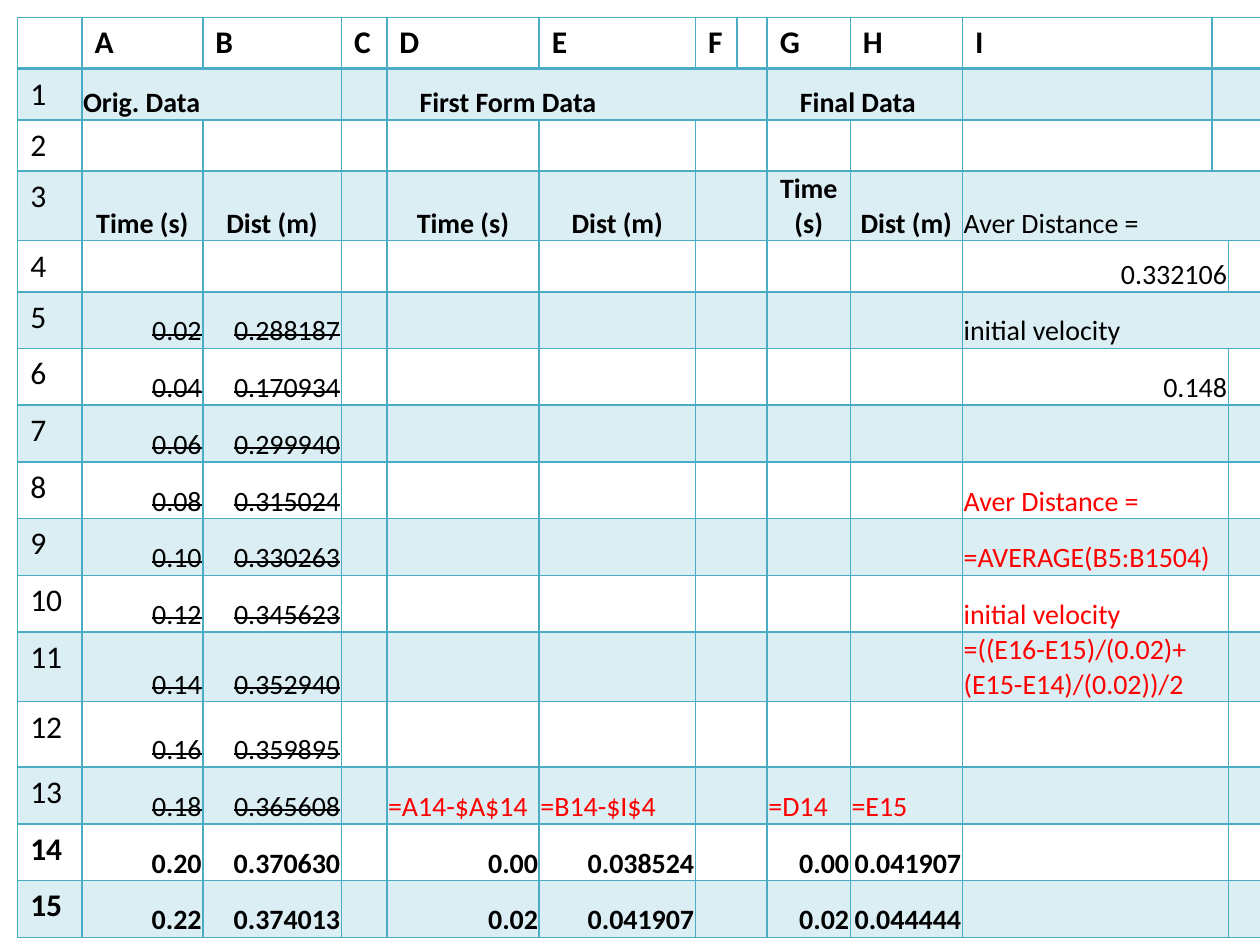
from dataclasses import dataclass

from lxml.etree import SubElement
from pptx import Presentation
from pptx.dml.color import RGBColor
from pptx.enum.text import MSO_ANCHOR, PP_ALIGN
from pptx.oxml.ns import qn
from pptx.table import Table, _Cell
from pptx.util import Inches, Pt


@dataclass(frozen=True)
class Theme:
    font: str = "Calibri"
    ink: str = "000000"
    formula: str = "FF0000"
    accent: str = "4BACC6"
    band_opacity: int = 20
    label_size: int = 18
    data_size: int = 16
    grid_line: float = 1
    header_line: float = 2


@dataclass(frozen=True)
class Entry:
    row: int
    column: int
    text: str
    align: PP_ALIGN = PP_ALIGN.LEFT
    bold: bool = False
    strike: bool = False
    color: str = Theme.ink
    indent: float = 0.01
    is_label: bool = False


@dataclass(frozen=True)
class Span:
    row: int
    first: int
    last: int


THEME = Theme()
COLUMN_WIDTHS = [0.51, 0.96, 1.1, 0.36, 1.21, 1.24, 0.33, 0.23, 0.66, 0.89, 1.98, 0.13, 0.27]
ROW_HEIGHTS = [0.31, 0.29, 0.33, 0.43, 0.36] + [0.45] * 7 + [0.52] + [0.45] * 3
A, B, C, D, E, F, F_EXTRA, G, H, I, I_EXTRA, LAST = range(1, 13)
LETTER_COLUMNS = dict(zip("ABCDEFGHI", (A, B, C, D, E, F, G, H, I)))
FIRST_SAMPLE_ROW = 5
FIRST_KEPT_ROW = 14
DISTANCES = [
    "0.288187", "0.170934", "0.299940", "0.315024", "0.330263", "0.345623",
    "0.352940", "0.359895", "0.365608", "0.370630", "0.374013",
]
SHIFTED_DISTANCES = ["0.038524", "0.041907", "0.044444"]
SECTION_INDENT = 0.26


def label_entries() -> list[Entry]:
    letters = [Entry(0, column, letter, bold=True, is_label=True)
               for letter, column in LETTER_COLUMNS.items()]
    numbers = [Entry(row, 0, str(row), bold=row >= FIRST_KEPT_ROW, is_label=True)
               for row in range(1, len(ROW_HEIGHTS))]
    return letters + numbers


def heading_entries() -> list[Entry]:
    sections = [
        Entry(1, A, "Orig. Data", bold=True),
        Entry(1, D, "First Form Data", bold=True, indent=SECTION_INDENT),
        Entry(1, G, "Final Data", bold=True, indent=SECTION_INDENT),
    ]
    units = [Entry(3, column + offset, text, PP_ALIGN.CENTER, bold=True)
             for column in (A, D, G)
             for offset, text in enumerate(("Time (s)", "Dist (m)"))]
    return sections + units


def sample_entries() -> list[Entry]:
    entries = []
    for index, distance in enumerate(DISTANCES):
        row = FIRST_SAMPLE_ROW + index
        kept = row >= FIRST_KEPT_ROW
        for column, text in ((A, f"{0.02 * (index + 1):.2f}"), (B, distance)):
            entries.append(Entry(row, column, text, PP_ALIGN.RIGHT, bold=kept, strike=not kept))
    for index in range(len(SHIFTED_DISTANCES) - 1):
        time = f"{0.02 * index:.2f}"
        shifted = {D: time, E: SHIFTED_DISTANCES[index],
                   G: time, H: SHIFTED_DISTANCES[index + 1]}
        entries += [Entry(FIRST_KEPT_ROW + index, column, text, PP_ALIGN.RIGHT, bold=True)
                    for column, text in shifted.items()]
    return entries


def result_entries() -> list[Entry]:
    formulas = [
        (8, I, "Aver Distance ="),
        (9, I, "=AVERAGE(B5:B1504)"),
        (10, I, "initial velocity"),
        (11, I, "=((E16-E15)/(0.02)+(E15-E14)/(0.02))/2"),
        (13, D, "=A14-$A$14"),
        (13, E, "=B14-$I$4"),
        (13, G, "=D14"),
        (13, H, "=E15"),
    ]
    return [
        Entry(3, I, "Aver Distance ="),
        Entry(4, I, "0.332106", PP_ALIGN.RIGHT),
        Entry(5, I, "initial velocity"),
        Entry(6, I, "0.148", PP_ALIGN.RIGHT),
    ] + [Entry(*formula, color=THEME.formula) for formula in formulas]


def spans() -> list[Span]:
    merged = [Span(1, A, B), Span(1, D, F_EXTRA), Span(1, G, H)]
    merged += [Span(row, I_EXTRA, LAST) for row in range(3)]
    merged += [Span(row, F, F_EXTRA) for row in range(2, len(ROW_HEIGHTS))]
    merged += [Span(row, I, LAST if row in (3, 5) else I_EXTRA)
               for row in range(3, len(ROW_HEIGHTS))]
    return merged


def draw_border(cell: _Cell, side: str, width: float) -> None:
    line = SubElement(cell._tc.get_or_add_tcPr(), qn(f"a:{side}"), w=str(Pt(width)))
    fill = SubElement(line, qn("a:solidFill"))
    SubElement(fill, qn("a:srgbClr"), val=THEME.accent)


def fill_band(cell: _Cell) -> None:
    cell.fill.solid()
    cell.fill.fore_color.rgb = RGBColor.from_string(THEME.accent)
    color = cell._tc.tcPr.find(qn("a:solidFill")).find(qn("a:srgbClr"))
    SubElement(color, qn("a:alpha"), val=str(THEME.band_opacity * 1000))


def style_grid(table: Table) -> None:
    for row in range(len(ROW_HEIGHTS)):
        for column in range(len(COLUMN_WIDTHS)):
            cell = table.cell(row, column)
            for side in ("lnL", "lnR", "lnT", "lnB"):
                under_header = (row, side) in ((0, "lnB"), (1, "lnT"))
                draw_border(cell, side, THEME.header_line if under_header else THEME.grid_line)
            if row % 2:
                fill_band(cell)
            else:
                cell.fill.background()


def write_entry(table: Table, entry: Entry) -> None:
    cell = table.cell(entry.row, entry.column)
    cell.text_frame.text = entry.text
    if not entry.is_label:
        cell.vertical_anchor = MSO_ANCHOR.BOTTOM
        cell.margin_left = Inches(entry.indent)
        cell.margin_right = cell.margin_top = Inches(0.01)
        cell.margin_bottom = 0
    paragraph = cell.text_frame.paragraphs[0]
    paragraph.alignment = entry.align
    run = paragraph.runs[0]
    run.font.name = THEME.font
    run.font.size = Pt(THEME.label_size if entry.is_label else THEME.data_size)
    run.font.bold = entry.bold
    run.font.color.rgb = RGBColor.from_string(entry.color)
    if entry.strike:
        run._r.get_or_add_rPr().set("strike", "sngStrike")


def main() -> None:
    presentation = Presentation()
    presentation.slide_width = Inches(10)
    presentation.slide_height = Inches(7.5)
    slide = presentation.slides.add_slide(presentation.slide_layouts[6])
    worksheet = slide.shapes.add_table(
        len(ROW_HEIGHTS), len(COLUMN_WIDTHS),
        Inches(0.14), Inches(0.14), Inches(9.86), Inches(7.28))
    table = worksheet.table
    table.first_row = table.horz_banding = False
    for column, width in zip(table.columns, COLUMN_WIDTHS):
        column.width = Inches(width)
    for row, height in zip(table.rows, ROW_HEIGHTS):
        row.height = Inches(height)
    worksheet.height = Inches(7.28)
    style_grid(table)
    for span in spans():
        table.cell(span.row, span.first).merge(table.cell(span.row, span.last))
    for entry in label_entries() + heading_entries() + sample_entries() + result_entries():
        write_entry(table, entry)
    presentation.save("out.pptx")


if __name__ == "__main__":
    main()
